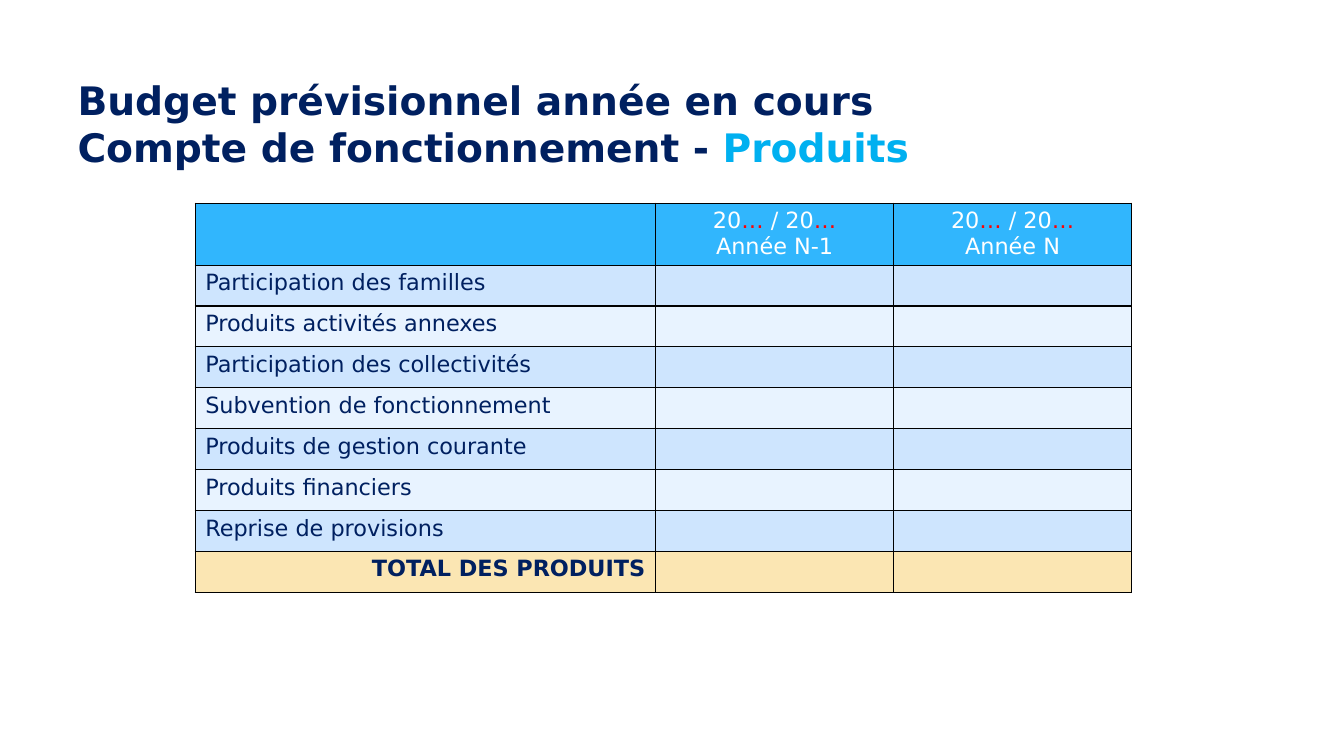
from lxml.etree import SubElement
from pptx import Presentation
from pptx.dml.color import RGBColor
from pptx.enum.text import MSO_ANCHOR, MSO_AUTO_SIZE, PP_ALIGN
from pptx.oxml.ns import qn
from pptx.util import Cm, Pt

FONT = "DejaVu Sans"
NAVY = RGBColor(0x00, 0x20, 0x60)
CYAN = RGBColor(0x00, 0xB0, 0xF0)
RED = RGBColor(0xFF, 0x00, 0x00)
WHITE = RGBColor(0xFF, 0xFF, 0xFF)
BLACK = RGBColor(0x00, 0x00, 0x00)
HEADER_BLUE = RGBColor(0x31, 0xB6, 0xFD)
BANDS = (RGBColor(0xCE, 0xE5, 0xFE), RGBColor(0xE8, 0xF3, 0xFF))
TOTAL_SAND = RGBColor(0xFB, 0xE6, 0xB3)

TITLE_BOX = (Cm(1.7), Cm(1.73), Cm(26.85), Cm(2.21))
TABLE_BOX = (Cm(4.92), Cm(5.12), Cm(23.6), Cm(9.8))
HEADER_HEIGHT = Cm(1.56)
YEAR_WIDTH = Cm(6)

YEARS = ("Année N-1", "Année N")
PRODUCTS = (
    "Participation des familles",
    "Produits activités annexes",
    "Participation des collectivités",
    "Subvention de fonctionnement",
    "Produits de gestion courante",
    "Produits financiers",
    "Reprise de provisions",
)


def add_span(para, text, color, size=16, bold=False):
    span = para.add_run()
    span.text = text
    span.font.color.rgb = color
    for name, value in {"name": FONT, "size": Pt(size), "bold": bold}.items():
        setattr(span.font, name, value)


def paint_cell(cell, fill):
    """Draw the black border and the background of a cell."""
    properties = cell._tc.get_or_add_tcPr()
    for side in ("a:lnL", "a:lnR", "a:lnT", "a:lnB"):
        line = SubElement(properties, qn(side), w=str(Pt(1)))
        paint = SubElement(line, qn("a:solidFill"))
        SubElement(paint, qn("a:srgbClr"), val=str(BLACK))
    cell.fill.solid()
    cell.fill.fore_color.rgb = fill


def add_title(page, box):
    title = page.shapes.title
    title.left, title.top, title.width, title.height = box
    frame = title.text_frame
    frame_format = {
        "auto_size": MSO_AUTO_SIZE.NONE,
        "vertical_anchor": MSO_ANCHOR.TOP,
        "margin_top": Cm(0.2),
        "word_wrap": True,
    }
    for name, value in frame_format.items():
        setattr(frame, name, value)
    para = frame.paragraphs[0]
    para.alignment = PP_ALIGN.LEFT
    add_span(para, "Budget prévisionnel année en cours", NAVY, 28, True)
    para.add_line_break()
    add_span(para, "Compte de fonctionnement - ", NAVY, 28, True)
    add_span(para, "Produits", CYAN, 28, True)


def add_year_heading(cell, year):
    frame = cell.text_frame
    period = frame.paragraphs[0]
    for text, color in (("20", WHITE), ("… ", RED), ("/ 20", WHITE), ("…", RED)):
        add_span(period, text, color)
    add_span(frame.add_paragraph(), year, WHITE)
    for para in frame.paragraphs:
        para.alignment = PP_ALIGN.CENTER


def add_budget_table(page, box):
    row_count = len(PRODUCTS) + 2
    table = page.shapes.add_table(row_count, len(YEARS) + 1, *box).table
    table.first_row = table.horz_banding = False

    # Column widths and row heights
    width, height = box[2:]
    table.columns[0].width = width - len(YEARS) * YEAR_WIDTH
    for column in range(1, len(YEARS) + 1):
        table.columns[column].width = YEAR_WIDTH
    table.rows[0].height = HEADER_HEIGHT
    for row in range(1, row_count):
        table.rows[row].height = (height - HEADER_HEIGHT) // (row_count - 1)

    # Backgrounds: header, alternating bands, total
    bands = [BANDS[index % 2] for index in range(len(PRODUCTS))]
    for row, fill in zip(table.rows, [HEADER_BLUE, *bands, TOTAL_SAND]):
        for cell in row.cells:
            paint_cell(cell, fill)

    # Wording
    for column, year in enumerate(YEARS, 1):
        add_year_heading(table.cell(0, column), year)
    for row, product in enumerate(PRODUCTS, 1):
        add_span(table.cell(row, 0).text_frame.paragraphs[0], product, NAVY)
    total = table.cell(row_count - 1, 0).text_frame.paragraphs[0]
    total.alignment = PP_ALIGN.RIGHT
    add_span(total, "TOTAL DES PRODUITS", NAVY, bold=True)


def main():
    deck = Presentation()
    deck.slide_width, deck.slide_height = Cm(33.87), Cm(19.05)
    page = deck.slides.add_slide(deck.slide_layouts.get_by_name("Title Only"))
    add_title(page, TITLE_BOX)
    add_budget_table(page, TABLE_BOX)
    deck.save("out.pptx")


if __name__ == "__main__":
    main()
